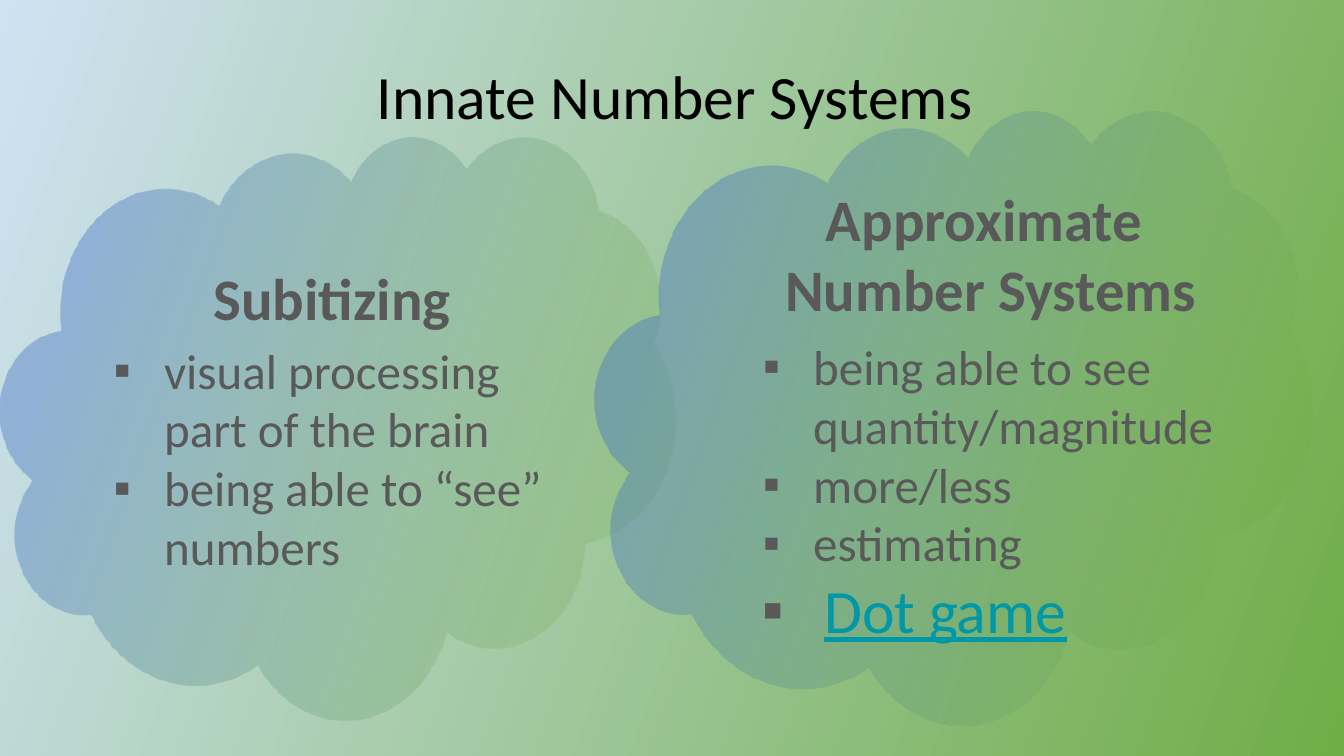
from dataclasses import dataclass

from lxml.etree import SubElement
from pptx import Presentation
from pptx.dml.color import RGBColor
from pptx.enum.shapes import MSO_SHAPE as Preset
from pptx.enum.text import MSO_ANCHOR as Anchor, PP_ALIGN as Align
from pptx.oxml.ns import qn
from pptx.util import Pt


@dataclass(frozen=True)
class Theme:
    font: str = "Calibri"
    title_color: str = "000000"
    text_color: str = "595959"
    link_color: str = "0097A7"
    green: str = "70AD47"
    blue: str = "4472C4"
    pale: str = "CFE2F3"
    title_size: float = 44
    heading_size: float = 42
    item_size: float = 35
    link_size: float = 44
    gradient_angle: float = 160
    inset: float = 7.2


@dataclass(frozen=True)
class Box:
    left: float
    top: float
    width: float
    height: float

    def inner(self, left, top, width, height):
        return Box(self.left + left, self.top + top, width, height)

    def points(self):
        return Pt(self.left), Pt(self.top), Pt(self.width), Pt(self.height)


THEME = Theme()
SKY = [(0, THEME.green, 20), (100, THEME.pale, 100)]
CLOUD = [(0, THEME.green, 20), (16, THEME.green, 20),
         (85, THEME.blue, 40), (100, THEME.blue, 40)]


def paint_gradient(fill, owner, stops):
    fill.gradient()
    fill.gradient_angle = THEME.gradient_angle
    stop_list = owner.find(".//" + qn("a:gsLst"))
    for old_stop in list(stop_list):
        stop_list.remove(old_stop)
    for position, color, opacity in stops:
        stop = SubElement(stop_list, qn("a:gs"), pos=str(position * 1000))
        tint = SubElement(stop, qn("a:srgbClr"), val=color)
        if opacity < 100:
            SubElement(tint, qn("a:alpha"), val=str(opacity * 1000))


def add_text_frame(slide, box, anchor=Anchor.TOP):
    frame = slide.shapes.add_textbox(*box.points()).text_frame
    frame.word_wrap = True
    frame.vertical_anchor = anchor
    frame.margin_left = frame.margin_right = Pt(THEME.inset)
    frame.margin_top = frame.margin_bottom = Pt(THEME.inset)
    return frame


def add_paragraph(frame, index):
    return frame.add_paragraph() if index else frame.paragraphs[0]


def add_run(paragraph, words, size, color, bold=False, underline=False):
    run = paragraph.add_run()
    run.text = words
    run.font.name = THEME.font
    run.font.size = Pt(size)
    run.font.bold = bold
    run.font.underline = underline
    run.font.color.rgb = RGBColor.from_string(color)


def add_bullet(paragraph, margin, hanging):
    properties = paragraph._p.get_or_add_pPr()
    properties.set("marL", str(Pt(margin)))
    properties.set("indent", str(-Pt(hanging)))
    bullet_color = SubElement(properties, qn("a:buClr"))
    SubElement(bullet_color, qn("a:srgbClr"), val=THEME.text_color)
    SubElement(properties, qn("a:buFont"), typeface="Arial")
    SubElement(properties, qn("a:buChar"), char="▪")


def add_title(slide, box, words):
    title = add_text_frame(slide, box).paragraphs[0]
    title.alignment = Align.CENTER
    title.line_spacing = 0.9
    add_run(title, words, THEME.title_size, THEME.title_color)


def add_heading(slide, box, lines):
    frame = add_text_frame(slide, box)
    for index, line in enumerate(lines):
        heading = add_paragraph(frame, index)
        heading.alignment = Align.CENTER
        add_run(heading, line, THEME.heading_size, THEME.text_color, bold=True)


def add_ideas(slide, box, ideas, link):
    frame = add_text_frame(slide, box, Anchor.MIDDLE)
    for index, idea in enumerate(ideas):
        item = add_paragraph(frame, index)
        add_bullet(item, 36.7, 36)
        add_run(item, idea, THEME.item_size, THEME.text_color)
    if link:
        item = frame.add_paragraph()
        add_bullet(item, 44.6, 44.6)
        add_run(item, link, THEME.link_size, THEME.link_color, underline=True)


def add_cloud(slide, box, heading_box, heading, ideas_box, ideas, link=None):
    cloud = slide.shapes.add_shape(Preset.CLOUD, *box.points())
    cloud.shadow.inherit = False
    cloud.line.fill.background()
    paint_gradient(cloud.fill, cloud._element, CLOUD)
    add_heading(slide, box.inner(*heading_box), heading)
    add_ideas(slide, box.inner(*ideas_box), ideas, link)


def main():
    deck = Presentation()
    deck.slide_width, deck.slide_height = Pt(960), Pt(540)
    slide = deck.slides.add_slide(deck.slide_layouts[6])
    paint_gradient(slide.background.fill, slide._element, SKY)
    add_cloud(
        slide, Box(0, 97.2, 482.4, 416.2),
        (108, 82.8, 258.5, 55.4), ["Subitizing"],
        (73.4, 113.8, 334.8, 231.8),
        ["visual processing part of the brain", "being able to “see” numbers"],
    )
    add_title(slide, Box(254.2, 40.3, 455.8, 55.4), "Innate Number Systems")
    add_cloud(
        slide, Box(424.8, 78.5, 512.6, 438.5),
        (104.4, 44.6, 357.1, 116.6), ["Approximate ", "Number Systems"],
        (112.3, 168.5, 424.8, 207.4),
        ["being able to see quantity/magnitude", "more/less", "estimating"],
        link="Dot game",
    )
    deck.save("out.pptx")


if __name__ == "__main__":
    main()
